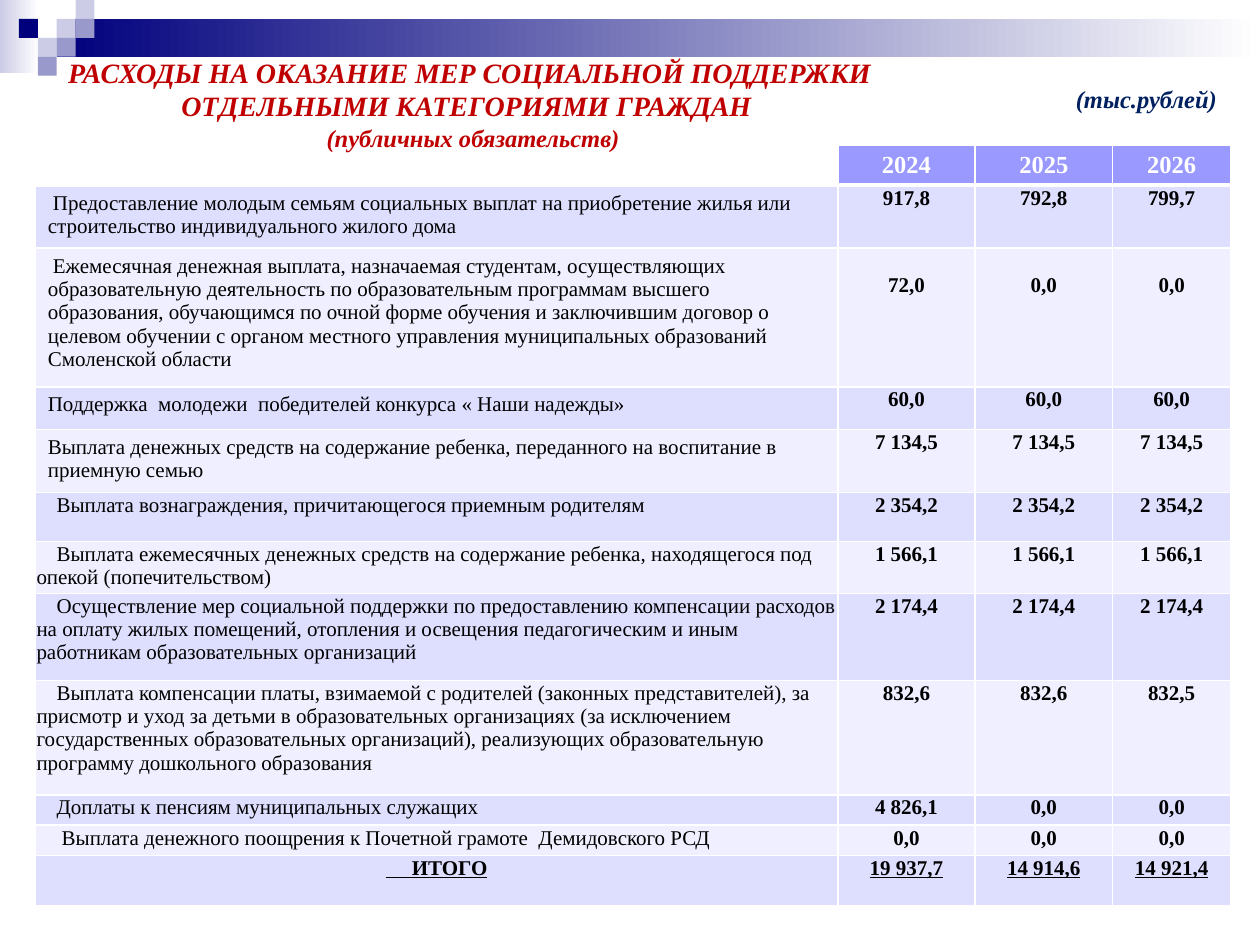
from dataclasses import dataclass

from lxml import etree
from pptx import Presentation
from pptx import util as u
from pptx.dml.color import RGBColor
from pptx.enum import shapes, text
from pptx.oxml import ns


@dataclass(frozen=True)
class Theme:
    """Colours, font and type sizes of the slide."""
    font: str = "Times New Roman"
    navy: str = "00007D"
    lilac: str = "CCCCE6"
    violet: str = "9999CC"
    white: str = "FFFFFF"
    black: str = "000000"
    red: str = "C00000"
    unit_blue: str = "002060"
    header: str = "9999FF"
    bands: tuple = ("DEDEFF", "EFEFFF")
    title: int = 16
    label: int = 14
    body: int = 12


THEME = Theme()
COLUMN_WIDTHS = (6.37, 1.09, 1.09, 0.94)
YEARS = ("2024", "2025", "2026")
HEADER_HEIGHT = 0.32
SPACE = 0.04
WIDE, TIGHT = (0.1, 0.05, 0.1, 0.05), (0.01, 0.01, 0.01, 0)
LOWERED = (0.01, 0.2, 0.01, 0)

EXPENSES = (
    (0.5, WIDE, 1, "Предоставление молодым семьям социальных выплат на приобретение жилья "
     "или строительство индивидуального жилого дома", ("917,8", "792,8", "799,7")),
    (1.1, WIDE, 1, "Ежемесячная денежная выплата, назначаемая студентам, осуществляющих "
     "образовательную деятельность по образовательным программам высшего образования, "
     "обучающимся по очной форме обучения и заключившим договор о целевом обучении с органом "
     "местного управления муниципальных образований Смоленской области", ("72,0", "0,0", "0,0")),
    (0.34, WIDE, 0, "Поддержка  молодежи  победителей конкурса « Наши надежды»",
     ("60,0", "60,0", "60,0")),
    (0.5, WIDE, 0, "Выплата денежных средств на содержание ребенка, переданного на воспитание "
     "в приемную семью", ("7 134,5", "7 134,5", "7 134,5")),
    (0.39, TIGHT, 4, "Выплата вознаграждения, причитающегося приемным родителям",
     ("2 354,2", "2 354,2", "2 354,2")),
    (0.41, TIGHT, 4, "Выплата ежемесячных денежных средств на содержание ребенка, находящегося "
     "под опекой (попечительством)", ("1 566,1", "1 566,1", "1 566,1")),
    (0.69, TIGHT, 4, "Осуществление мер социальной поддержки по предоставлению компенсации "
     "расходов на оплату жилых помещений, отопления и освещения педагогическим и иным "
     "работникам образовательных организаций", ("2 174,4", "2 174,4", "2 174,4")),
    (0.91, TIGHT, 4, "Выплата компенсации платы, взимаемой с родителей (законных "
     "представителей), за присмотр и уход за детьми в образовательных организациях "
     "(за исключением государственных образовательных организаций), реализующих "
     "образовательную программу дошкольного образования", ("832,6", "832,6", "832,5")),
    (0.24, TIGHT, 4, "Доплаты к пенсиям муниципальных служащих", ("4 826,1", "0,0", "0,0")),
    (0.24, TIGHT, 5, "Выплата денежного поощрения к Почетной грамоте  Демидовского РСД",
     ("0,0", "0,0", "0,0")),
    (0.4, TIGHT, 0, "     ИТОГО", ("19 937,7", "14 914,6", "14 921,4")),
)


def style(span, size, colour, **flags):
    """Format one run."""
    span.font.name = THEME.font
    span.font.size = u.Pt(size)
    span.font.color.rgb = RGBColor.from_string(colour)
    for name, value in flags.items():
        setattr(span.font, name, value)


def add_block(page, box, *colours):
    """Draw a borderless rectangle, solid or fading between two colours."""
    block = page.shapes.add_shape(shapes.MSO_SHAPE.RECTANGLE, *map(u.Inches, box))
    block.shadow.inherit = False
    block.line.fill.background()
    if len(colours) == 1:
        block.fill.solid()
        block.fill.fore_color.rgb = RGBColor.from_string(colours[0])
        return
    block.fill.gradient()
    block.fill.gradient_angle = 0
    for stop, colour in zip(block.fill.gradient_stops, colours):
        stop.color.rgb = RGBColor.from_string(colour)


def add_banner(page, box):
    """Draw the fading bands and the mosaic of squares at the top."""
    left, top, width, height = box
    side = height / 4
    add_block(page, (left, top, 0.31, 0.58), THEME.lilac, THEME.white)
    add_block(page, (left + 3 * side, top + side, width - 3 * side, 2 * side),
              THEME.navy, THEME.white)
    mosaic = ((3, 1, THEME.lilac), (4, 0, THEME.lilac), (4, 1, THEME.violet),
              (2, 2, THEME.lilac), (1, 1, THEME.navy), (3, 2, THEME.violet),
              (2, 3, THEME.violet))
    for column, row, colour in mosaic:
        add_block(page, (left + column * side, top + row * side, side, side), colour)


def add_caption(page, box, lines, colour, align, wrap):
    """Place bold italic lines, each a list of wording and size pairs."""
    frame = page.shapes.add_textbox(*map(u.Inches, box)).text_frame
    frame.word_wrap = wrap
    frame.auto_size = text.MSO_AUTO_SIZE.SHAPE_TO_FIT_TEXT
    for index, line in enumerate(lines):
        para = frame.add_paragraph() if index else frame.paragraphs[0]
        para.alignment = align
        for wording, size in line:
            span = para.add_run()
            span.text = wording
            style(span, size, colour, bold=True, italic=True)


def set_borders(cell, top, bottom):
    """Give a cell white borders, with the top and bottom widths in points."""
    properties = cell._tc.get_or_add_tcPr()
    for tag, width in (("a:lnL", 1), ("a:lnR", 1), ("a:lnT", top), ("a:lnB", bottom)):
        line = etree.SubElement(properties, ns.qn(tag), w=str(u.Pt(width)))
        fill = etree.SubElement(line, ns.qn("a:solidFill"))
        etree.SubElement(fill, ns.qn("a:srgbClr"), val=THEME.white)


def fill_cell(cell, wording, fill, margins, size, colour, align, indent=0, **flags):
    """Write one table cell with its fill, margins and type."""
    cell.margin_left, cell.margin_top, cell.margin_right, cell.margin_bottom = map(u.Inches, margins)
    cell.fill.solid()
    cell.fill.fore_color.rgb = RGBColor.from_string(fill)
    para = cell.text_frame.paragraphs[0]
    para.text = wording
    para.alignment = align
    if indent:
        para._p.get_or_add_pPr().set("indent", str(u.Inches(indent)))
    style(para.runs[0], size, colour, **flags)


def add_expenses(page, box):
    """Build the table of expenses by year."""
    left_align, centre = text.PP_ALIGN.LEFT, text.PP_ALIGN.CENTER
    table = page.shapes.add_table(len(EXPENSES) + 1, len(COLUMN_WIDTHS), *map(u.Inches, box)).table
    for column, width in zip(table.columns, COLUMN_WIDTHS):
        column.width = u.Inches(width)
    for index, row in enumerate(table.rows):
        row.height = u.Inches(EXPENSES[index - 1][0] if index else HEADER_HEIGHT)
        for cell in row.cells:
            set_borders(cell, 3 if index == 1 else 1, 1 if index else 3)
    corner = table.cell(0, 0)
    corner.fill.background()
    corner.margin_top = corner.margin_bottom = 0
    for column, year in enumerate(YEARS, 1):
        fill_cell(table.cell(0, column), year, THEME.header, WIDE, THEME.label, THEME.white,
                  centre, bold=True)
    for row, (height, margins, spaces, wording, amounts) in enumerate(EXPENSES, 1):
        band = THEME.bands[(row - 1) % 2]
        total = row == len(EXPENSES)
        fill_cell(table.cell(row, 0), wording, band, margins, THEME.body, THEME.black,
                  centre if total else left_align, spaces * SPACE, bold=total, underline=total)
        for column, amount in enumerate(amounts, 1):
            fill_cell(table.cell(row, column), amount, band, LOWERED if height > 1 else TIGHT,
                      THEME.body, THEME.black, centre, bold=True, underline=total)


def main():
    """Build and save the slide."""
    deck = Presentation()
    deck.slide_width, deck.slide_height = u.Inches(10), u.Inches(7.5)
    page = deck.slides.add_slide(deck.slide_layouts[6])
    add_banner(page, (0, 0, 10, 0.6))
    add_expenses(page, (0.28, 1.15, 9.49, 6.06))
    heading = (
        [("РАСХОДЫ НА ОКАЗАНИЕ МЕР СОЦИАЛЬНОЙ ПОДДЕРЖКИ ", THEME.title)],
        [("ОТДЕЛЬНЫМИ КАТЕГОРИЯМИ ГРАЖДАН ", THEME.title), (" ", THEME.label)],
        [("(публичных обязательств)", THEME.label)],
    )
    add_caption(page, (0.16, 0.39, 7.19, 0.88), heading, THEME.red, text.PP_ALIGN.CENTER, True)
    add_caption(page, (8.44, 0.62, 1.33, 0.34), ([("(тыс.рублей)", THEME.label)],),
                THEME.unit_blue, text.PP_ALIGN.LEFT, False)
    deck.save("out.pptx")


if __name__ == "__main__":
    main()
